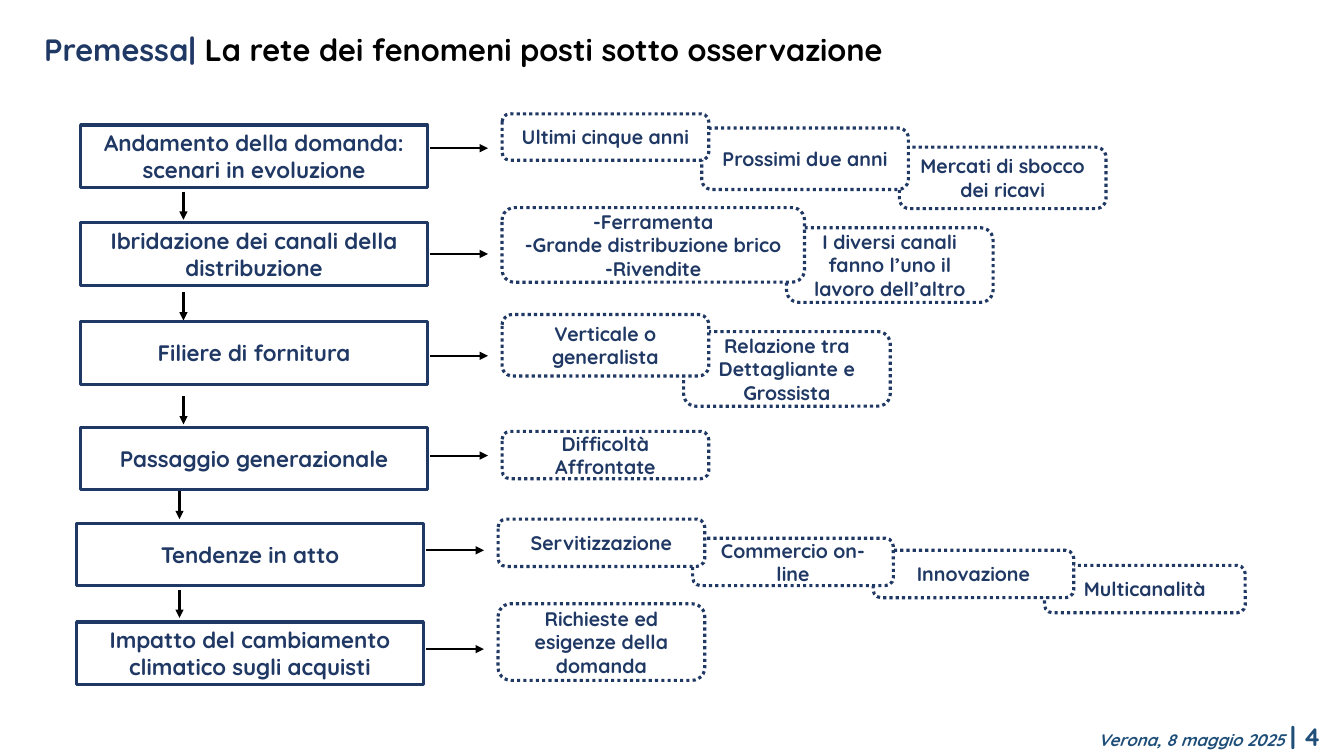
"""Build the slide that maps each observed phenomenon to its aspects."""
from lxml import etree
from pptx import Presentation
from pptx import util as u
from pptx.dml.color import RGBColor
from pptx.enum import dml, shapes, text
from pptx.oxml.ns import qn

NAVY = RGBColor(0x20, 0x38, 0x64)
BLUE = RGBColor(0x1F, 0x4E, 0x79)
BLACK = RGBColor(0, 0, 0)
WHITE = RGBColor(255, 255, 255)
FONT = "Quicksand"

CELL = u.Inches(0.01)
COLUMNS, ROWS = 1333, 750
TOPIC_LEFT, TOPIC_WIDTH, TOPIC_HEIGHT = 80, 344, 62
ASPECT_LEFT = 498
SIDE_START, SIDE_LENGTH = 427, 57
DOWN_LEFT, DOWN_LENGTH = 182, 28

TITLE = [
    ("Premessa| ", {"size": u.Pt(22), "color": NAVY}),
    ("La rete dei fenomeni posti sotto osservazione", {"size": u.Pt(22), "color": BLACK}),
]
FOOTER = [
    ("Verona, 8 maggio 2025 ", {"size": u.Pt(12), "color": BLUE, "italic": True}),
    ("| 4", {"size": u.Pt(18), "color": BLUE}),
]

# Topic: label, shift, top, side arrow row, down arrow row; aspect: step right, top, width, height, label
TOPICS = [
    ("Andamento della domanda: scenari in evoluzione", 0, 124, 147, 190, [
        (0, 113, 205, 46, "Ultimi cinque anni"),
        (198, 127, 205, 61, "Prossimi due anni"),
        (394, 146, 205, 61, "Mercati di sbocco dei ricavi")]),
    ("Ibridazione dei canali della distribuzione", 0, 221, 252, 290, [
        (0, 206, 300, 74, "-Ferramenta\n-Grande distribuzione brico\n-Rivendite"),
        (282, 226, 205, 74, "I diversi canali fanno l’uno il lavoro dell’altro")]),
    ("Filiere di fornitura", 0, 319, 353, 393, [
        (0, 312, 205, 61, "Verticale o generalista"),
        (180, 329, 205, 74, "Relazione tra Dettagliante e Grossista")]),
    ("Passaggio generazionale", 0, 424, 452, None, [
        (0, 428, 205, 47, "Difficoltà Affrontate")]),
    ("Tendenze in atto", -4, 519, 546, 585, [
        (0, 515, 205, 47, "Servitizzazione"),
        (193, 534, 199, 47, "Commercio on-line"),
        (372, 546, 199, 47, "Innovazione"),
        (542, 561, 199, 47, "Multicanalità")]),
    ("Impatto del cambiamento climatico sugli acquisti", -4, 617, 644, None, [
        (0, 599, 205, 76, "Richieste ed esigenze della domanda")]),
]
LAST_DOWN = (178, 487)


def cells(*counts):
    return [count * CELL for count in counts]


def write(para, spans):
    for words, look in spans:
        span = para.add_run()
        span.text = words
        span.font.color.rgb = look["color"]
        values = {"name": FONT, "bold": True, "size": look["size"], "italic": look.get("italic", False)}
        for name, value in values.items():
            setattr(span.font, name, value)


def add_label(page, place, spans, align, anchor):
    box = page.shapes.add_textbox(*cells(*place))
    for name, value in {"word_wrap": True, "vertical_anchor": anchor}.items():
        setattr(box.text_frame, name, value)
    para = box.text_frame.paragraphs[0]
    para.alignment = align
    write(para, spans)


def add_box(page, place, words, size, dotted):
    box = page.shapes.add_shape(shapes.MSO_SHAPE.ROUNDED_RECTANGLE, *cells(*place))
    box.shadow.inherit = False
    box.fill.solid()
    box.fill.fore_color.rgb = WHITE
    box.line.color.rgb = NAVY
    box.line.width = u.Pt(2.25)
    if dotted:
        box.line.dash_style = dml.MSO_LINE.ROUND_DOT
    else:
        box.adjustments[0] = 0
    frame = box.text_frame
    for name, value in {"word_wrap": True, "vertical_anchor": text.MSO_ANCHOR.MIDDLE}.items():
        setattr(frame, name, value)
    for index, row in enumerate(words.split("\n")):
        para = frame.add_paragraph() if index else frame.paragraphs[0]
        para.alignment = text.PP_ALIGN.CENTER
        write(para, [(row, {"size": u.Pt(size), "color": NAVY})])


def add_arrow(page, left, top, across, down):
    arrow = page.shapes.add_connector(
        shapes.MSO_CONNECTOR.STRAIGHT, *cells(left, top, left + across, top + down))
    arrow.line.color.rgb = BLACK
    arrow.line.width = u.Pt(1.5)
    etree.SubElement(arrow.line._get_or_add_ln(), qn("a:tailEnd"), type="triangle")
    etree.SubElement(arrow._element.spPr, qn("a:effectLst"))


def add_topic(page, label, shift, top, side, down, aspects):
    for step, aspect_top, width, height, words in reversed(aspects):
        place = (ASPECT_LEFT + shift + step, aspect_top, width, height)
        add_box(page, place, words, 14, dotted=True)
    add_arrow(page, SIDE_START + shift, side, SIDE_LENGTH, 0)
    if down:
        add_arrow(page, DOWN_LEFT + shift, down, 0, DOWN_LENGTH)
    add_box(page, (TOPIC_LEFT + shift, top, TOPIC_WIDTH, TOPIC_HEIGHT), label, 16, dotted=False)


def main():
    deck = Presentation()
    deck.slide_width, deck.slide_height = cells(COLUMNS, ROWS)
    page = deck.slides.add_slide(deck.slide_layouts[6])
    add_label(page, (627, 711, 693, 40), FOOTER, text.PP_ALIGN.RIGHT, text.MSO_ANCHOR.MIDDLE)
    add_label(page, (34, 26, 1296, 45), TITLE, text.PP_ALIGN.LEFT, text.MSO_ANCHOR.TOP)
    for topic in TOPICS:
        add_topic(page, *topic)
    add_arrow(page, *LAST_DOWN, 0, DOWN_LENGTH)
    deck.save("out.pptx")


if __name__ == "__main__":
    main()
